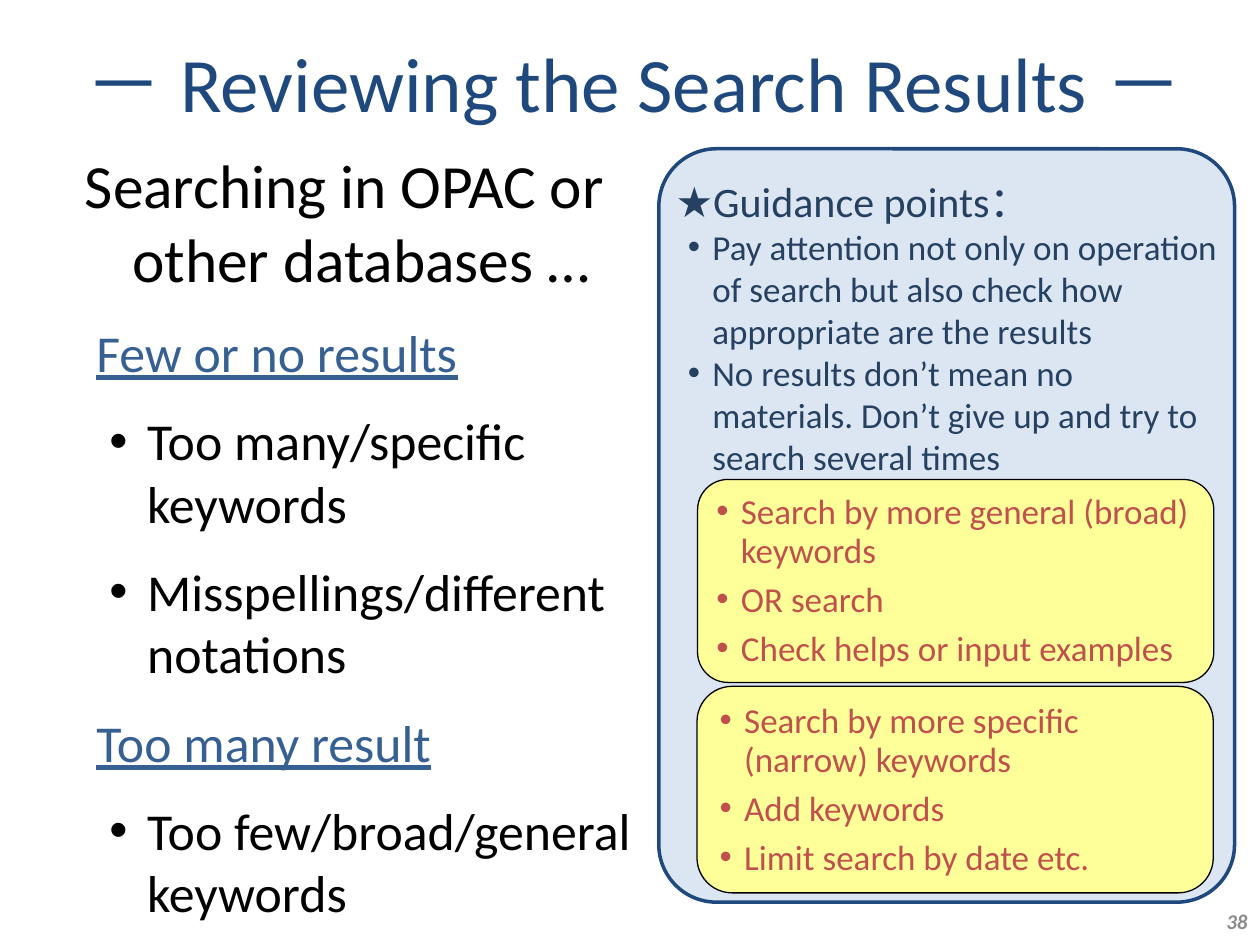
from pptx import Presentation
from pptx.dml.color import RGBColor
from pptx.enum import shapes, text
from pptx.util import Pt
from lxml import etree

NAVY = RGBColor(0x1F, 0x49, 0x7D)
DEEP_BLUE = RGBColor(0x25, 0x40, 0x61)
BLUE = RGBColor(0x37, 0x60, 0x92)
PALE_BLUE = RGBColor(0xDC, 0xE6, 0xF2)
YELLOW = RGBColor(0xFF, 0xFF, 0x99)
RED = RGBColor(0xC0, 0x50, 0x4D)
GRAY = RGBColor(0x8C, 0x8C, 0x8C)
BLACK = RGBColor(0, 0, 0)
A = "{http://schemas.openxmlformats.org/drawingml/2006/main}"

deck = Presentation()
deck.slide_width, deck.slide_height = Pt(720), Pt(540)
slide = deck.slides.add_slide(deck.slide_layouts[6])


def write(frame, index, words, size, color, indent=(0, 0), bullet=False, before=0):
    paragraph = frame.paragraphs[0] if index == 0 else frame.add_paragraph()
    paragraph.text = words
    paragraph.alignment = text.PP_ALIGN.LEFT
    paragraph.space_before = Pt(before)
    font = paragraph.runs[0].font
    font.name, font.size, font.color.rgb = "Calibri", Pt(size), color
    properties = paragraph._p.get_or_add_pPr()
    left, first = indent
    properties.set("marL", str(Pt(left)))
    properties.set("indent", str(Pt(first)))
    if bullet:
        etree.SubElement(properties, A + "buFont", typeface="Arial")
        etree.SubElement(properties, A + "buChar", char="•")
    return paragraph


def panel(box, roundness, fill, line, width, insets):
    shape = slide.shapes.add_shape(
        shapes.MSO_SHAPE.ROUNDED_RECTANGLE, *[Pt(v) for v in box])
    shape.adjustments[0] = roundness
    shape.shadow.inherit = False
    shape.fill.solid()
    shape.fill.fore_color.rgb = fill
    shape.line.color.rgb = line
    shape.line.width = Pt(width)
    frame = shape.text_frame
    frame.word_wrap = True
    (frame.margin_left, frame.margin_top,
     frame.margin_right, frame.margin_bottom) = [Pt(v) for v in insets]
    return frame


guidance = panel((376.5, 85, 329, 430.5), 0.1, PALE_BLUE, NAVY, 2, (0, 5.5, 0, 3))
guidance.vertical_anchor = text.MSO_ANCHOR.TOP
write(guidance, 0, "★Guidance points：", 24, DEEP_BLUE)
for index, point in enumerate([
    "Pay attention not only on operation of search but also check how appropriate are the results",
    "No results don’t mean no materials. Don’t give up and try to search several times",
], 1):
    write(guidance, index, point, 20, DEEP_BLUE, (21, -14), True)

problems = slide.shapes.add_textbox(Pt(41.5), Pt(80.5), Pt(335.5), Pt(438.5)).text_frame
problems.word_wrap = True
write(problems, 0, "Searching in OPAC or other databases …", 35.1, BLACK, (27, -27))
for index, (words, is_heading) in enumerate([
    ("Few or no results", True),
    ("Too many/specific keywords", False),
    ("Misspellings/different notations", False),
    ("Too many result", True),
    ("Too few/broad/general keywords", False),
], 1):
    if is_heading:
        heading = write(problems, index, words, 29.6, BLUE, (27, -20.5), before=15)
        heading.runs[0].font.underline = True
    else:
        write(problems, index, words, 29.6, BLACK, (35.5, -21.5), True, 15)

page = slide.shapes.add_textbox(Pt(552), Pt(512), Pt(168), Pt(28.5)).text_frame
page.word_wrap = True
page.vertical_anchor = text.MSO_ANCHOR.MIDDLE
number = write(page, 0, "38", 12, GRAY)
number.alignment = text.PP_ALIGN.RIGHT
number.runs[0].font.bold = number.runs[0].font.italic = True

for box, roundness, inset, tips in [
    ((398.6, 274, 295, 116), 0.15, 5.7,
     ["Search by more general (broad) keywords", "OR search",
      "Check helps or input examples"]),
    ((398.3, 392.2, 295, 118), 0.17, 7.2,
     ["Search by more specific (narrow) keywords", "Add keywords",
      "Limit search by date etc."]),
]:
    remedy = panel(box, roundness, YELLOW, BLACK, 0.75, (inset, 3, inset, 3))
    remedy.vertical_anchor = text.MSO_ANCHOR.MIDDLE
    for index, tip in enumerate(tips):
        write(remedy, index, tip, 20, RED, (14, -14), True, 6).line_spacing = Pt(22)

title = slide.shapes.add_textbox(Pt(19.5), Pt(21.5), Pt(686), Pt(50)).text_frame
title.word_wrap = True
title.vertical_anchor = text.MSO_ANCHOR.MIDDLE
write(title, 0, "－ Reviewing the Search Results －", 44, NAVY).alignment = text.PP_ALIGN.CENTER

deck.save("out.pptx")
